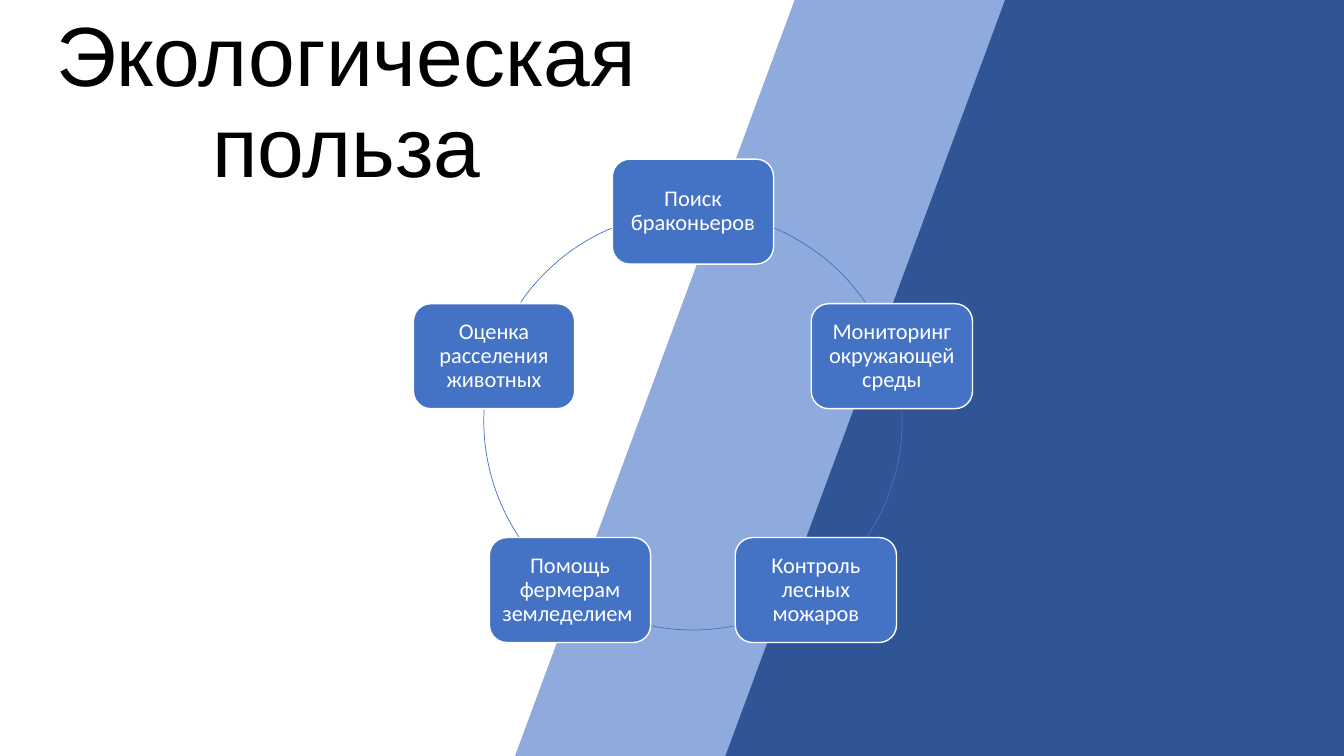
from math import cos, radians, sin

from pptx import Presentation
from pptx.dml.color import RGBColor
from pptx.enum.shapes import MSO_SHAPE
from pptx.enum.text import MSO_ANCHOR, PP_ALIGN
from pptx.util import Inches, Pt

RECT, CARD, ARC = MSO_SHAPE.RECTANGLE, MSO_SHAPE.ROUNDED_RECTANGLE, MSO_SHAPE.ARC
CENTER = PP_ALIGN.CENTER
MIDDLE, BOTTOM = MSO_ANCHOR.MIDDLE, MSO_ANCHOR.BOTTOM

COLS = 64  # square cells, 64 columns by 36 rows
WHITE, BLACK = "FFFFFF", "000000"
LIGHT, BLUE, NAVY = "8FAADC", "4472C4", "2F5597"
TILT = 20.3
HUB_X, HUB_Y, RADIUS = 33, 20.04, 9.96
CARD_W, CARD_H = 7.68, 5

TOPICS = [
    "Поиск браконьеров",
    "Мониторинг окружающей среды",
    "Контроль лесных можаров",
    "Помощь фермерам земледелием ",
    "Оценка расселения животных",
]
# Visible parts of the ring, in degrees clockwise from the right
GAPS = [(292.9, 325.5), (356.8, 33.7), (78.6, 101.4), (146.3, 183.2), (214.5, 247.1)]


def color(code):
    return RGBColor.from_string(code)


class Page:
    def __init__(self, deck):
        self.slide = deck.slides.add_slide(deck.slide_layouts[6])
        self.cell = deck.slide_width / COLS

    def box(self, *cells):
        return [round(n * self.cell) for n in cells]

    def shape(self, kind, cells, fill=None, line=None, width=1):
        item = self.slide.shapes.add_shape(kind, *self.box(*cells))
        item.shadow.inherit = False
        if fill:
            item.fill.solid()
            item.fill.fore_color.rgb = color(fill)
        else:
            item.fill.background()
        if line:
            item.line.color.rgb = color(line)
            item.line.width = Pt(width)
        else:
            item.line.fill.background()
        return item

    def label(self, frame, text, font, size, ink, anchor):
        frame.word_wrap = True
        frame.vertical_anchor = anchor
        par = frame.paragraphs[0]
        par.text = text
        par.alignment = CENTER
        par.line_spacing = 0.9
        par.font.name, par.font.size = font, Pt(size)
        par.font.color.rgb = color(ink)

    def band(self, left, top, fill):
        self.shape(RECT, (left, top, 47.38, 66.48), fill).rotation = TILT

    def title(self, cells, text):
        frame = self.slide.shapes.add_textbox(*self.box(*cells)).text_frame
        self.label(frame, text, "Arial", 60, BLACK, BOTTOM)

    def card(self, x, y, text):
        """Draw a card centred on the given cell."""
        cells = (x - CARD_W / 2, y - CARD_H / 2, CARD_W, CARD_H)
        frame = self.shape(CARD, cells, BLUE, WHITE).text_frame
        frame.margin_left = frame.margin_right = Inches(0.07)
        frame.margin_top = frame.margin_bottom = Inches(0.07)
        self.label(frame, text, "Calibri", 16, WHITE, MIDDLE)

    def arc(self, start, end):
        cells = (HUB_X - RADIUS, HUB_Y - RADIUS, 2 * RADIUS, 2 * RADIUS)
        item = self.shape(ARC, cells, line=BLUE, width=0.5)
        for i, angle in enumerate((start, end)):
            item.adjustments[i] = angle * 0.6  # 60000 units a degree

    def cycle(self, topics, gaps):
        step = 360 / len(topics)
        for i, (topic, gap) in enumerate(zip(topics, gaps)):
            turn = radians(i * step)
            self.card(HUB_X + RADIUS * sin(turn), HUB_Y - RADIUS * cos(turn), topic)
            self.arc(*gap)


def main():
    deck = Presentation()
    deck.slide_width, deck.slide_height = Inches(40 / 3), Inches(7.5)
    page = Page(deck)
    page.band(29.62, -6.77, LIGHT)
    page.title((-3.36, -2.21, 39.7, 11.76), "Экологическая польза")
    page.band(39.94, -7.58, NAVY)
    page.cycle(TOPICS, GAPS)
    deck.save("out.pptx")


if __name__ == "__main__":
    main()
